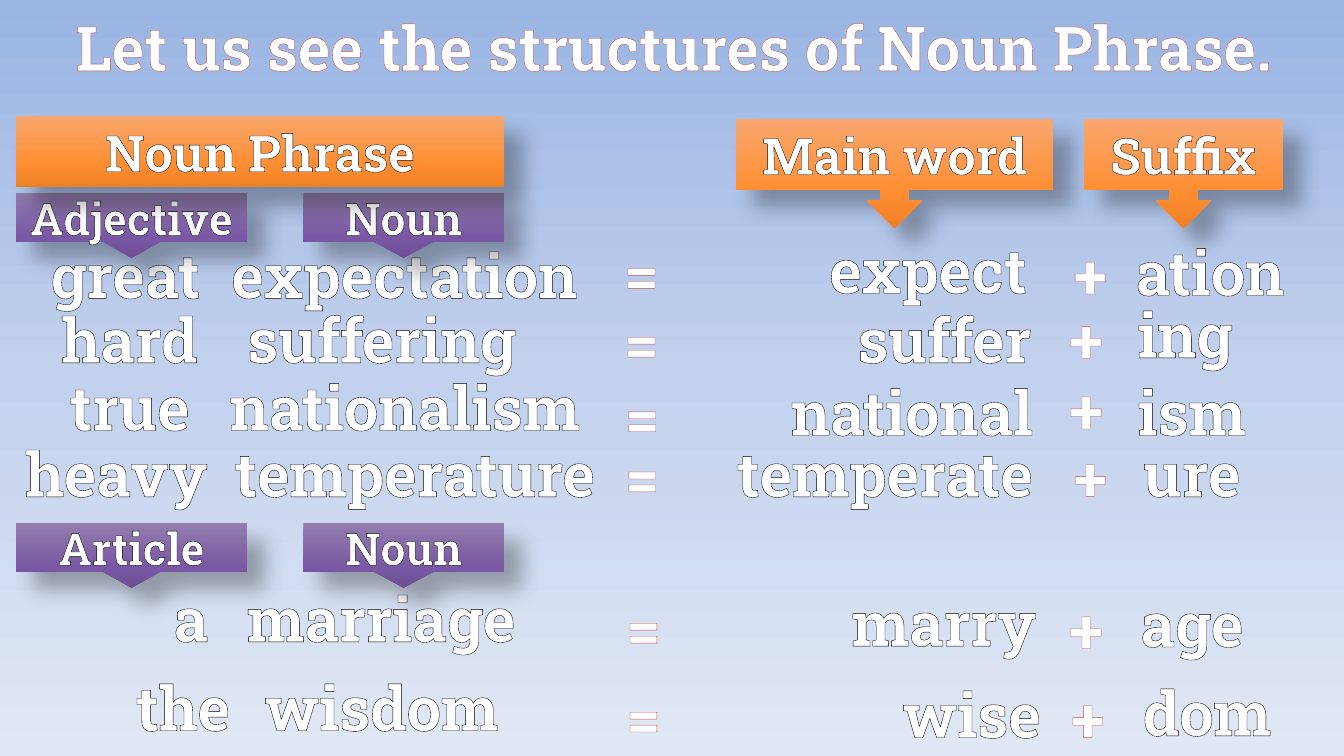
from pptx import Presentation
from pptx.dml.color import RGBColor
from pptx.enum.shapes import MSO_SHAPE
from pptx.enum.text import MSO_ANCHOR, MSO_AUTO_SIZE, PP_ALIGN
from pptx.oxml import parse_xml
from pptx.oxml.ns import nsdecls, qn
from pptx.util import Pt

RECT = MSO_SHAPE.RECTANGLE
CALLOUT = MSO_SHAPE.DOWN_ARROW_CALLOUT
TOP, MIDDLE = MSO_ANCHOR.TOP, MSO_ANCHOR.MIDDLE
CENTER = PP_ALIGN.CENTER
GROW = MSO_AUTO_SIZE.SHAPE_TO_FIT_TEXT

FONT = "Roboto Slab"
WHITE = RGBColor(0xFF, 0xFF, 0xFF)
BLACK = RGBColor(0x00, 0x00, 0x00)
RED = RGBColor(0xC0, 0x50, 0x4D)
SKY = [(0, RGBColor(0x9A, 0xB5, 0xE4)), (50, RGBColor(0xC2, 0xD1, 0xED)),
       (100, RGBColor(0xE1, 0xE8, 0xF5))]
PURPLE = [(0, RGBColor(0x92, 0x7D, 0xAE)), (69, RGBColor(0x79, 0x57, 0xA4)),
          (100, RGBColor(0x6E, 0x4F, 0x95))]
ORANGE = [(0, RGBColor(0xF8, 0xA7, 0x6E)), (69, RGBColor(0xFF, 0x8D, 0x30)),
          (100, RGBColor(0xED, 0x80, 0x26))]

WORD_HEIGHT = 60.5
# Adjective or article, noun, "=", main word, "+", suffix
COLUMN_WIDTHS = (160, 292, 40, 252, 40, 153)
# Row top, then each word with its centre and its drop below the row top
ROWS = [
    (165.6, [("great", 89.6, 0), ("expectation", 289, 0), ("=", 458, 0),
             ("expect", 663, -3.6), ("+", 778.7, 0), ("ation", 864.4, -2)]),
    (211.7, [("hard", 92.5, 0), ("suffering", 272.5, 0), ("=", 458, 3),
             ("suffer", 674.6, 0), ("+", 775.8, 0), ("ing", 846.4, -3.6)]),
    (260, [("true", 92.5, 0), ("nationalism", 289.4, 0), ("=", 458.6, 8),
           ("national", 651.6, 3.6), ("+", 775.8, 2), ("ism", 851.4, 3.6)]),
    (307.4, [("heavy", 83.2, 0), ("temperature", 296.3, 0), ("=", 458.6, 3.6),
             ("temperate", 632.2, 0), ("+", 778.7, 3), ("ure", 851.4, 0)]),
    (411, [("a", 136.4, 0), ("marriage", 272.5, 0), ("=", 459.4, 8),
           ("marry", 674.6, 3), ("+", 775.8, 8), ("age", 851.4, 3.6)]),
    (474.5, [("the", 130.7, 0), ("wisdom", 272.5, 0), ("=", 459.4, 8),
             ("wise", 694, 5), ("+", 777, 8), ("dom", 862.2, 3.6)]),
]


def paint_gradient(fill, owner, stops):
    """Fill from top to bottom; owner is the XML element that holds the fill."""
    fill.gradient()
    fill.gradient_angle = 270
    stop_list = owner.find(qn("a:gradFill")).find(qn("a:gsLst"))
    for old in list(stop_list):
        stop_list.remove(old)
    for percent, color in stops:
        stop_list.append(parse_xml(
            f'<a:gs {nsdecls("a")} pos="{percent * 1000}">'
            f'<a:srgbClr val="{color}"/></a:gs>'))


def add_outlined_text(tf, text, size, color, width):
    """Write centred white bold text whose letters have an outline."""
    tf.word_wrap = True
    p = tf.paragraphs[0]
    p.alignment = CENTER
    r = p.add_run()
    r.text = text
    r.font.name, r.font.size, r.font.bold = FONT, Pt(size), True
    r.font.color.rgb = WHITE
    r.font._element.insert(0, parse_xml(
        f'<a:ln {nsdecls("a")} w="{Pt(width)}"><a:solidFill>'
        f'<a:srgbClr val="{color}"/></a:solidFill></a:ln>'))


def add_title(s, left, top, width, height):
    sp = s.shapes.title
    sp.left, sp.top, sp.width, sp.height = map(Pt, (left, top, width, height))
    tf = sp.text_frame
    tf.vertical_anchor = TOP
    tf.auto_size = GROW
    add_outlined_text(tf, "Let us see the structures of Noun Phrase.", 44, RED, 0.52)


def add_word_row(s, top, words):
    for (text, center, drop), width in zip(words, COLUMN_WIDTHS):
        sp = s.shapes.add_textbox(Pt(center - width / 2), Pt(top + drop),
                                  Pt(width), Pt(WORD_HEIGHT))
        sp.text_frame.auto_size = GROW
        color, line = (RED, 0.52) if text in "=+" else (BLACK, 0.75)
        add_outlined_text(sp.text_frame, text, 44, color, line)


def add_label(s, kind, text, box, stops, size, outline=1.06):
    """Add a heading with a gradient and a soft shadow."""
    sp = s.shapes.add_shape(kind, *map(Pt, box))
    paint_gradient(sp.fill, sp._element.spPr, stops)
    sp.line.fill.background()
    sp.shadow.inherit = False
    sp._element.spPr.find(qn("a:effectLst")).append(parse_xml(
        f'<a:outerShdw {nsdecls("a")} blurRad="{Pt(15)}" dist="{Pt(18)}" '
        f'dir="2700000" algn="ctr" rotWithShape="0"><a:srgbClr val="{BLACK}">'
        '<a:alpha val="30000"/></a:srgbClr></a:outerShdw>'))
    sp.text_frame.vertical_anchor = MIDDLE
    add_outlined_text(sp.text_frame, text, size, BLACK, outline)
    return sp


def add_part_labels(s, left, top, first):
    """Add the purple pair that names the two parts of the phrase."""
    for text, offset, width, head in ((first, 0, 165, 0.446),
                                      ("Noun", 205.2, 143.3, 0.464)):
        sp = add_label(s, CALLOUT, text, (left + offset, top, width, 46),
                       PURPLE, 32)
        sp.adjustments[1] = head
        sp.adjustments[3] = 0.75


def add_phrase_slide(prs):
    s = prs.slides.add_slide(prs.slide_layouts[5])
    fill = s.background.fill
    fill.solid()
    paint_gradient(fill, s._element.cSld.bg.bgPr, SKY)
    add_title(s, 23, 3, 918, WORD_HEIGHT)
    for top, words in ROWS:
        add_word_row(s, top, words)
    add_part_labels(s, 11.5, 138, "Adjective")
    add_label(s, CALLOUT, "Main word", (525.6, 85, 226.8, 77.8), ORANGE, 36)
    add_label(s, CALLOUT, "Suffix", (774, 85, 142.6, 77.8), ORANGE, 36)
    add_label(s, RECT, "Noun Phrase", (11.5, 82.8, 348.5, 51), ORANGE, 36, 0.75)
    add_part_labels(s, 11.5, 373.7, "Article")


def main():
    prs = Presentation()
    prs.slide_width, prs.slide_height = Pt(960), Pt(540)
    add_phrase_slide(prs)
    prs.save("out.pptx")


if __name__ == "__main__":
    main()
